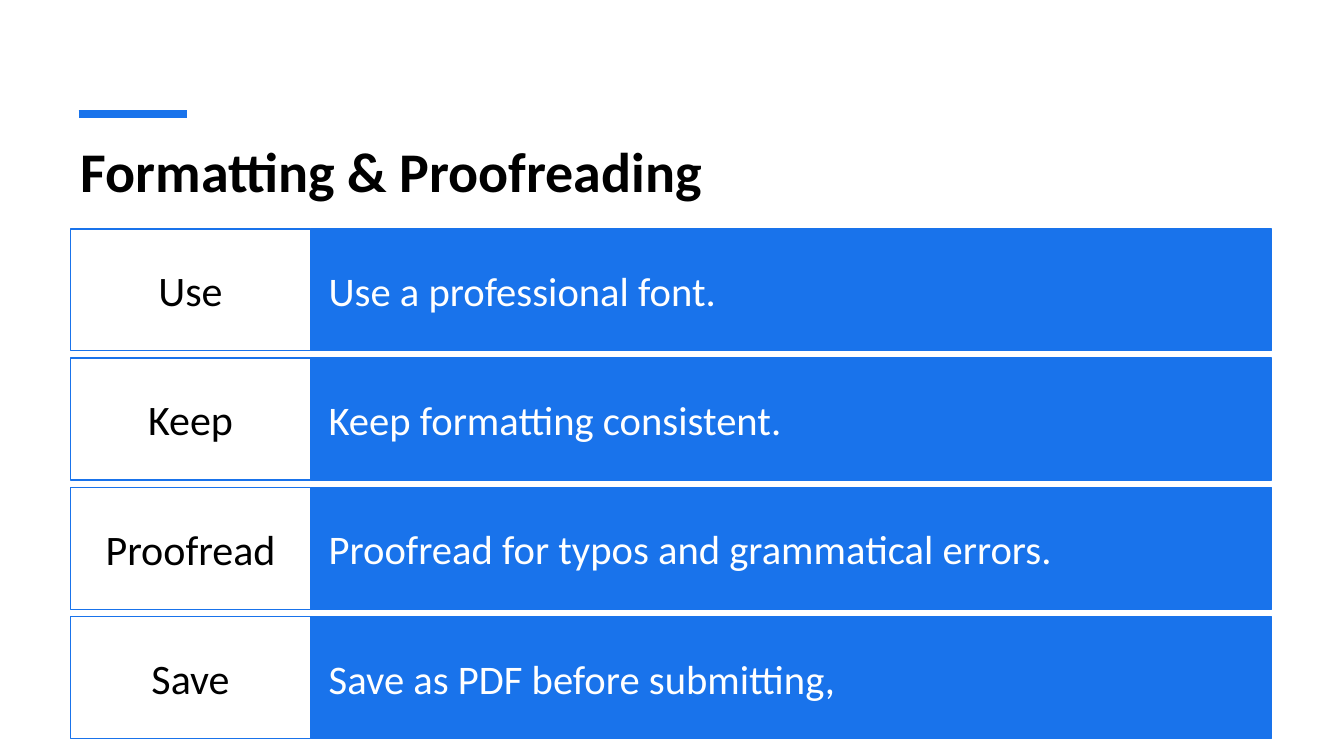
from dataclasses import dataclass

from lxml import etree
from pptx import Presentation
from pptx import util as u
from pptx.dml.color import RGBColor
from pptx.enum import shapes, text
from pptx.oxml.ns import qn

BLUE = RGBColor(0x19, 0x73, 0xEB)
WHITE = RGBColor(0xFF, 0xFF, 0xFF)
BLACK = RGBColor(0x00, 0x00, 0x00)
FONT = "Calibri"

# Grid in inches
LEFT, TOP = 0.7, 2.27
LABEL_W, DETAIL_W = 2.38, 9.53
ROW_H, ROW_PITCH = 1.21, 1.283


@dataclass(frozen=True)
class Tip:
    label: str
    detail: str


@dataclass(frozen=True)
class Column:
    left: float
    width: float
    fill: RGBColor
    color: RGBColor
    size: int
    align: text.PP_ALIGN
    inset_x: float
    inset_y: float


LABEL = Column(LEFT, LABEL_W, WHITE, BLACK, 30, text.PP_ALIGN.CENTER, 0.13, 0.12)
DETAIL = Column(LEFT + LABEL_W, DETAIL_W, BLUE, WHITE, 29, text.PP_ALIGN.LEFT, 0.18, 0.31)

TIPS = [
    Tip("Use", "Use a professional font."),
    Tip("Keep", "Keep formatting consistent."),
    Tip("Proofread", "Proofread for typos and grammatical errors."),
    Tip("Save", "Save as PDF before submitting,"),
]


def set_insets(tf, x: float, y: float) -> None:
    tf.margin_left = tf.margin_right = u.Inches(x)
    tf.margin_top = tf.margin_bottom = u.Inches(y)


def add_run(p, words: str, size: int, color: RGBColor, bold: bool = False) -> None:
    r = p.add_run()
    r.text = words
    r.font.name = FONT
    r.font.size = u.Pt(size)
    r.font.bold = bold
    r.font.color.rgb = color


def add_title(s, words: str) -> None:
    sp = s.shapes.title
    sp.left, sp.top = u.Inches(LEFT), u.Inches(1.27)
    sp.width, sp.height = u.Inches(LABEL_W + DETAIL_W), u.Inches(1.2)
    tf = sp.text_frame
    tf.word_wrap = True
    tf.auto_size = text.MSO_AUTO_SIZE.NONE
    tf.vertical_anchor = text.MSO_ANCHOR.TOP
    set_insets(tf, 0.1, 0.08)
    p = tf.paragraphs[0]
    p.alignment = text.PP_ALIGN.LEFT
    add_run(p, words, 40, BLACK, bold=True)


def add_accent(s) -> None:
    y = u.Inches(1.13)
    line = s.shapes.add_connector(
        shapes.MSO_CONNECTOR.STRAIGHT, u.Inches(0.78), y, u.Inches(1.85), y)
    line.line.color.rgb = BLUE
    line.line.width = u.Pt(6)
    etree.SubElement(line._element.spPr, qn("a:effectLst"))


def add_cell(s, col: Column, row: int, words: str) -> None:
    sp = s.shapes.add_shape(
        shapes.MSO_SHAPE.RECTANGLE, u.Inches(col.left), u.Inches(TOP + row * ROW_PITCH),
        u.Inches(col.width), u.Inches(ROW_H))
    sp.shadow.inherit = False
    sp.fill.solid()
    sp.fill.fore_color.rgb = col.fill
    sp.line.color.rgb = BLUE
    sp.line.width = u.Pt(1)
    tf = sp.text_frame
    tf.word_wrap = True
    tf.vertical_anchor = text.MSO_ANCHOR.MIDDLE
    set_insets(tf, col.inset_x, col.inset_y)
    p = tf.paragraphs[0]
    p.alignment = col.align
    add_run(p, words, col.size, col.color)


def main() -> None:
    prs = Presentation()
    prs.slide_width, prs.slide_height = u.Inches(13.33), u.Inches(7.5)
    s = prs.slides.add_slide(prs.slide_layouts.get_by_name("Title Only"))
    s.background.fill.solid()
    s.background.fill.fore_color.rgb = WHITE
    add_accent(s)
    add_title(s, "Formatting & Proofreading")
    for row, tip in enumerate(TIPS):
        add_cell(s, DETAIL, row, tip.detail)
        add_cell(s, LABEL, row, tip.label)
    prs.save("out.pptx")


if __name__ == "__main__":
    main()
